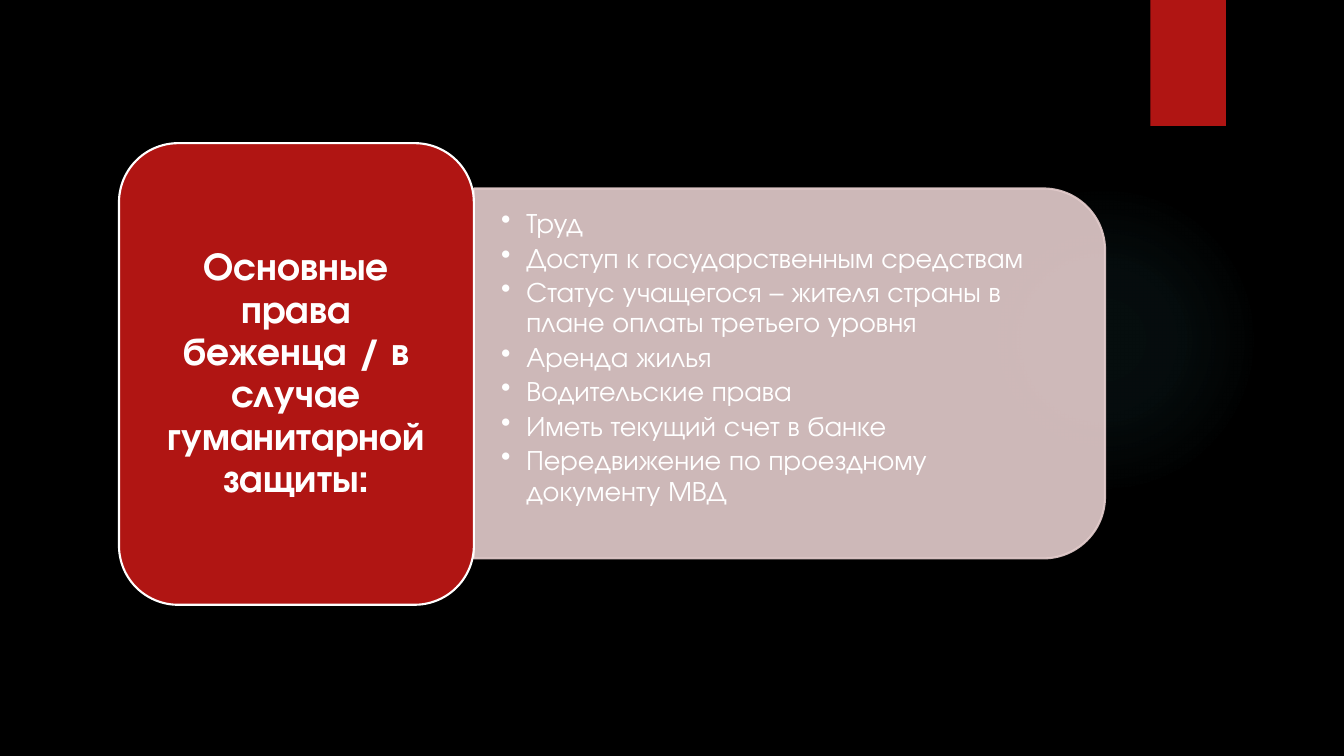
import dataclasses

import lxml.etree
import pptx
import pptx.dml.color
import pptx.enum.shapes
import pptx.enum.text
import pptx.oxml
import pptx.oxml.ns
import pptx.util

Inches = pptx.util.Inches
Shapes = pptx.enum.shapes.MSO_SHAPE
Align = pptx.enum.text.PP_ALIGN
qn = pptx.oxml.ns.qn


@dataclasses.dataclass(frozen=True)
class Theme:
    """Colours, font and type sizes of the slide."""

    background: str = "000000"
    accent: str = "B01513"
    panel: str = "E4CCCC"
    glow: str = "50B9C1"
    text: str = "FFFFFF"
    font: str = "TeX Gyre Adventor"
    heading_size: int = 28
    list_size: int = 20
    line_width: float = 1.5


THEME = Theme()
HEADING = "Основные права беженца / в случае гуманитарной защиты:"
RIGHTS = [
    "Труд",
    "Доступ к государственным средствам",
    "Статус учащегося – жителя страны в плане оплаты третьего уровня",
    "Аренда жилья",
    "Водительские права",
    "Иметь текущий счет в банке",
    "Передвижение по проездному документу МВД",
]


def rgb(value):
    """Turn a hex string into a colour."""
    return pptx.dml.color.RGBColor.from_string(value)


def add_alpha(color_element, percent):
    """Set the opacity of a colour element."""
    alpha = lxml.etree.SubElement(color_element, qn("a:alpha"))
    alpha.set("val", str(percent * 1000))


def add_box(slide, kind, box, fill=None, line=None, opacity=100):
    """Add a preset shape with an optional plain fill and outline."""
    shape = slide.shapes.add_shape(kind, *map(Inches, box))
    shape.shadow.inherit = False
    for part, color in ((shape.fill, fill), (shape.line.fill, line)):
        if color is None:
            part.background()
        else:
            part.solid()
            part.fore_color.rgb = rgb(color)
    if line:
        shape.line.width = pptx.util.Pt(THEME.line_width)
    if opacity < 100:
        for color_element in shape.element.spPr.iter(qn("a:srgbClr")):
            add_alpha(color_element, opacity)
    return shape


def add_text(slide, box, lines, *, size, insets, bold=False, align=Align.LEFT,
             bullet=None, space_after=0):
    """Add a vertically centred text box, one paragraph for each line."""
    frame = slide.shapes.add_textbox(*map(Inches, box)).text_frame
    frame.word_wrap = True
    frame.vertical_anchor = pptx.enum.text.MSO_ANCHOR.MIDDLE
    (frame.margin_left, frame.margin_top,
     frame.margin_right, frame.margin_bottom) = map(Inches, insets)
    for index, line in enumerate(lines):
        paragraph = frame.add_paragraph() if index else frame.paragraphs[0]
        paragraph.alignment = align
        paragraph.line_spacing = 0.9
        paragraph.space_after = pptx.util.Pt(space_after)
        if bullet:
            properties = paragraph._p.get_or_add_pPr()
            properties.set("marL", str(Inches(0.25)))
            properties.set("indent", str(Inches(-0.25)))
            lxml.etree.SubElement(properties, qn("a:buChar")).set("char", bullet)
        run = paragraph.add_run()
        run.text = line
        run.font.name = THEME.font
        run.font.size = pptx.util.Pt(size)
        run.font.bold = bold
        run.font.color.rgb = rgb(THEME.text)


def add_glow(slide, box):
    """Add a faint round glow that fades outwards."""
    glow = add_box(slide, Shapes.OVAL, box)
    gradient = pptx.oxml.parse_xml(
        f'<a:gradFill {pptx.oxml.ns.nsdecls("a")} rotWithShape="1"><a:gsLst/>'
        '<a:path path="circle"><a:fillToRect l="50000" t="50000" '
        'r="50000" b="50000"/></a:path></a:gradFill>')
    stops = gradient.find(qn("a:gsLst"))
    for position, opacity in ((0, 7), (36, 6), (69, 0), (100, 0)):
        stop = lxml.etree.SubElement(stops, qn("a:gs"))
        stop.set("pos", str(position * 1000))
        color = lxml.etree.SubElement(stop, qn("a:srgbClr"))
        color.set("val", THEME.glow)
        add_alpha(color, opacity)
    properties = glow.element.spPr
    properties.replace(properties.find(qn("a:noFill")), gradient)


def add_decoration(slide, box):
    """Add the glow and the red tab hanging from the top edge."""
    left, top, _, _ = box
    add_glow(slide, (left + 9.41, top + 1.83, 3.08, 3.08))
    add_box(slide, Shapes.RECTANGLE, (left + 11.41, top, 0.75, 1.25), THEME.accent)


def add_rights_panel(slide, box):
    """Add the pale panel, rounded on the right, with the list of rights."""
    left, top, width, height = box
    turned = (left + (width - height) / 2, top + (height - width) / 2, height, width)
    panel = add_box(slide, Shapes.ROUND_2_SAME_RECTANGLE, turned,
                    THEME.panel, THEME.panel, opacity=90)
    panel.rotation = 90
    add_text(slide, (left, top + 0.18, width - 0.18, height - 0.36), RIGHTS,
             size=THEME.list_size, insets=(0.27, 0.14, 0.27, 0.44),
             bullet="•", space_after=3)


def add_heading_card(slide, box):
    """Add the red card with the heading."""
    left, top, width, height = box
    add_box(slide, Shapes.ROUNDED_RECTANGLE, box, THEME.accent, THEME.text)
    add_text(slide, (left + 0.17, top + 0.17, width - 0.34, height - 0.34), [HEADING],
             size=THEME.heading_size, insets=(0.12, 0.06, 0.12, 0.06),
             bold=True, align=Align.CENTER)


def main():
    """Build and save the slide."""
    presentation = pptx.Presentation()
    presentation.slide_width = Inches(13.33)
    presentation.slide_height = Inches(7.5)
    slide = presentation.slides.add_slide(presentation.slide_layouts[6])
    slide.background.fill.solid()
    slide.background.fill.fore_color.rgb = rgb(THEME.background)
    add_decoration(slide, (0, 0, 13.33, 7.5))
    add_rights_panel(slide, (4.7, 1.87, 6.26, 3.67))
    add_heading_card(slide, (1.18, 1.42, 3.52, 4.58))
    presentation.save("out.pptx")


if __name__ == "__main__":
    main()
